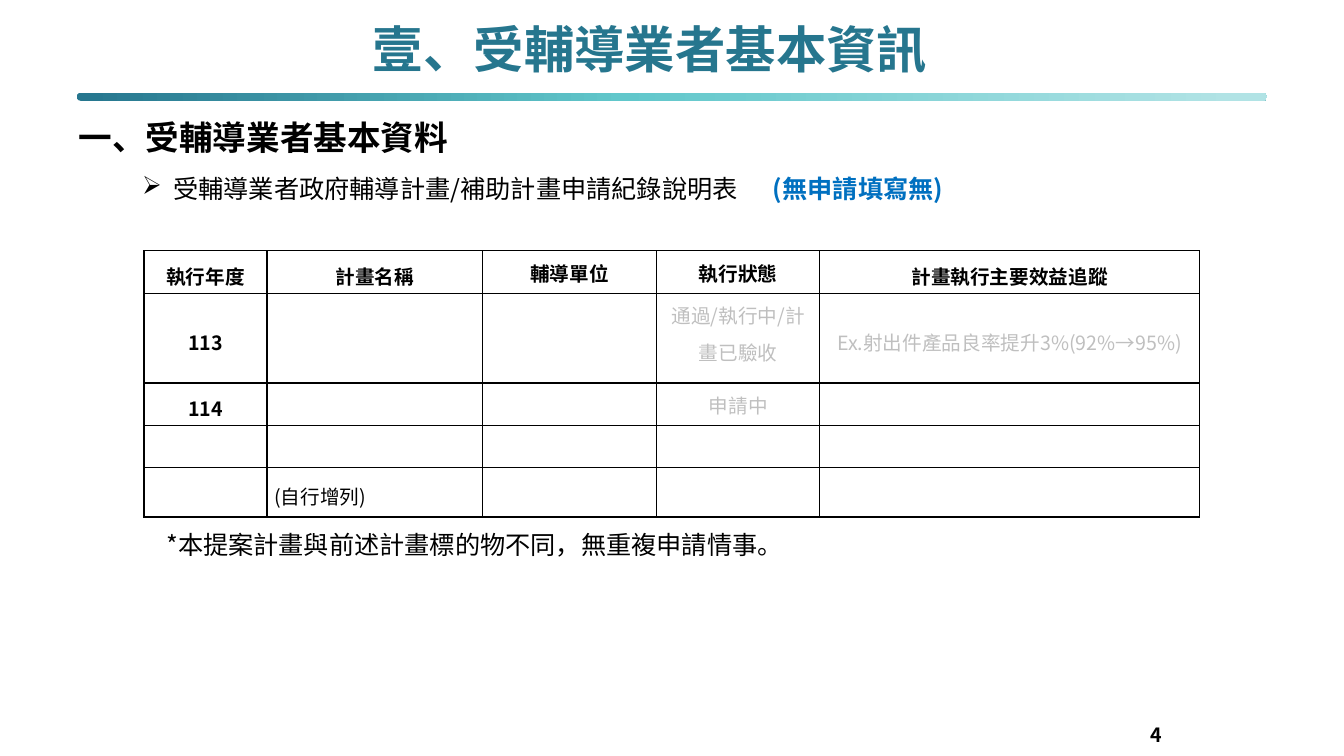
import pptx
import pptx.dml.color
import pptx.enum.shapes
import pptx.enum.text
import pptx.oxml
import pptx.oxml.ns
import pptx.util

Cm, Pt = pptx.util.Cm, pptx.util.Pt
ALIGN = pptx.enum.text.PP_ALIGN
ANCHOR = pptx.enum.text.MSO_ANCHOR

FONT = "Noto Sans CJK SC"
BLACK, TEAL, BLUE, GREY = "000000", "26768E", "0070C0", "BFBFBF"
BAR_STOPS = [(0, TEAL), (46, "61C7CB"), (97, "B1E3E5")]

TITLE = "壹、受輔導業者基本資訊"
SECTION = "一、受輔導業者基本資料"
SUBTITLE = [("受輔導業者政府輔導計畫/補助計畫申請紀錄說明表\t", {}),
            ("(無申請填寫無)", {"color": BLUE, "bold": True})]
NOTE = "*本提案計畫與前述計畫標的物不同，無重複申請情事。"
PAGE_NUMBER = "4"

RECORDS = [
    ["執行年度", "計畫名稱", "輔導單位", "執行狀態", "計畫執行主要效益追蹤"],
    ["113", "", "", "通過/執行中/計畫已驗收", "Ex.射出件產品良率提升3%(92%→95%)"],
    ["114", "", "", "申請中", ""],
    ["", "", "", "", ""],
    ["", "(自行增列)", "", "", ""],
]
COLUMN_WIDTHS = [3.1, 5.43, 4.39, 4.11, 9.57]
ROW_HEIGHTS = [1.07, 2.26, 1.07, 1.07, 1.24]
TOP_ANCHORED_COLUMNS = (2, 3)


def rgb(value):
    return pptx.dml.color.RGBColor.from_string(value)


def xml(body):
    """Parse one DrawingML element written with the a: prefix."""
    head, rest = body.split(">", 1)
    slash = "/" if head.endswith("/") else ""
    return pptx.oxml.parse_xml(
        f"{head.rstrip('/')} {pptx.oxml.ns.nsdecls('a')}{slash}>{rest}")


def write(paragraph, text, size=18, color=BLACK, bold=False, align=ALIGN.LEFT, spacing=None):
    run = paragraph.add_run()
    run.text = text
    run.font.name = FONT
    run.font.size = Pt(size)
    run.font.bold = bold
    run.font.color.rgb = rgb(color)
    run.font._element.append(xml(f'<a:ea typeface="{FONT}"/>'))
    paragraph.alignment = align
    if spacing:
        paragraph.line_spacing = spacing


def add_box(slide, left, top, width, height, anchor=ANCHOR.TOP, wrap=True):
    """Add a text box, lengths in cm, and return its first paragraph."""
    frame = slide.shapes.add_textbox(Cm(left), Cm(top), Cm(width), Cm(height)).text_frame
    frame.word_wrap = wrap
    frame.vertical_anchor = anchor
    return frame.paragraphs[0]


def add_title_bar(slide):
    bar = slide.shapes.add_shape(pptx.enum.shapes.MSO_SHAPE.ROUNDED_RECTANGLE,
                                 Cm(1.93), Cm(2.34), Cm(30), Cm(0.2))
    bar.adjustments[0] = 0.5
    bar.shadow.inherit = False
    bar.line.fill.background()
    bar.fill.gradient()
    bar.fill.gradient_angle = 0
    stops = bar._element.spPr.find(pptx.oxml.ns.qn("a:gradFill")).find(pptx.oxml.ns.qn("a:gsLst"))
    for stop in list(stops):
        stops.remove(stop)
    for position, color in BAR_STOPS:
        stops.append(xml(f'<a:gs pos="{position * 1000}"><a:srgbClr val="{color}"/></a:gs>'))


def add_bullet(paragraph, indent, tab):
    properties = paragraph._p.get_or_add_pPr()
    properties.set("marL", str(Cm(indent)))
    properties.set("indent", str(-Cm(indent)))
    properties.append(xml('<a:buFont typeface="Wingdings"/>'))
    properties.remove(properties[-1])
    properties.append(xml('<a:buChar char="➢"/>'))
    properties.append(xml(f'<a:tabLst><a:tab pos="{Cm(tab)}" algn="l"/></a:tabLst>'))


def set_borders(cell, width=1):
    properties = cell._tc.get_or_add_tcPr()
    for index, side in enumerate(("lnL", "lnR", "lnT", "lnB")):
        properties.insert(index, xml(
            f'<a:{side} w="{Pt(width)}"><a:solidFill><a:srgbClr val="{BLACK}"/>'
            f'</a:solidFill></a:{side}>'))


def add_records(slide):
    grid = slide.shapes.add_table(
        len(RECORDS), len(COLUMN_WIDTHS), Cm(3.63), Cm(6.32),
        Cm(sum(COLUMN_WIDTHS)), Cm(sum(ROW_HEIGHTS))).table
    grid.first_row = grid.horz_banding = False
    for column, width in zip(grid.columns, COLUMN_WIDTHS):
        column.width = Cm(width)
    for row, height in zip(grid.rows, ROW_HEIGHTS):
        row.height = Cm(height)
    for r, record in enumerate(RECORDS):
        for c, entry in enumerate(record):
            cell = grid.cell(r, c)
            cell.fill.background()
            set_borders(cell)
            cell.margin_left = cell.margin_right = Cm(0.18)
            cell.margin_top = cell.margin_bottom = 0
            cell.vertical_anchor = ANCHOR.TOP if c in TOP_ANCHORED_COLUMNS else ANCHOR.MIDDLE
            paragraph = cell.text_frame.paragraphs[0]
            if not entry:
                paragraph.font.size = Pt(14)
                continue
            write(paragraph, entry, size=14, spacing=Pt(26),
                  bold=r == 0 or c == 0,
                  color=GREY if r > 0 and c > 2 else BLACK,
                  align=ALIGN.LEFT if c == 1 and r > 0 else ALIGN.CENTER)


def main():
    deck = pptx.Presentation()
    deck.slide_width, deck.slide_height = Cm(33.87), Cm(19.05)
    slide = deck.slides.add_slide(deck.slide_layouts[6])

    add_title_bar(slide)
    write(add_box(slide, 28.4, 18.08, 1.14, 0.94), PAGE_NUMBER,
          size=14, bold=True, align=ALIGN.RIGHT)
    write(add_box(slide, 9.07, 0.5, 14.63, 1.65, ANCHOR.MIDDLE, wrap=False), TITLE,
          size=36, color=TEAL, bold=True, align=ALIGN.CENTER, spacing=0.9)
    write(add_box(slide, 1.73, 2.98, 21.11, 1.12, ANCHOR.MIDDLE), SECTION,
          size=24, bold=True, spacing=Pt(24))
    add_records(slide)

    subtitle = add_box(slide, 3.33, 4.24, 20.8, 1.02, ANCHOR.MIDDLE)
    add_bullet(subtitle, indent=0.79, tab=15.9)
    for text, style in SUBTITLE:
        write(subtitle, text, spacing=Pt(21.5), **style)
    write(add_box(slide, 3.94, 13.21, 21.8, 1.02), NOTE)

    deck.save("out.pptx")


if __name__ == "__main__":
    main()
